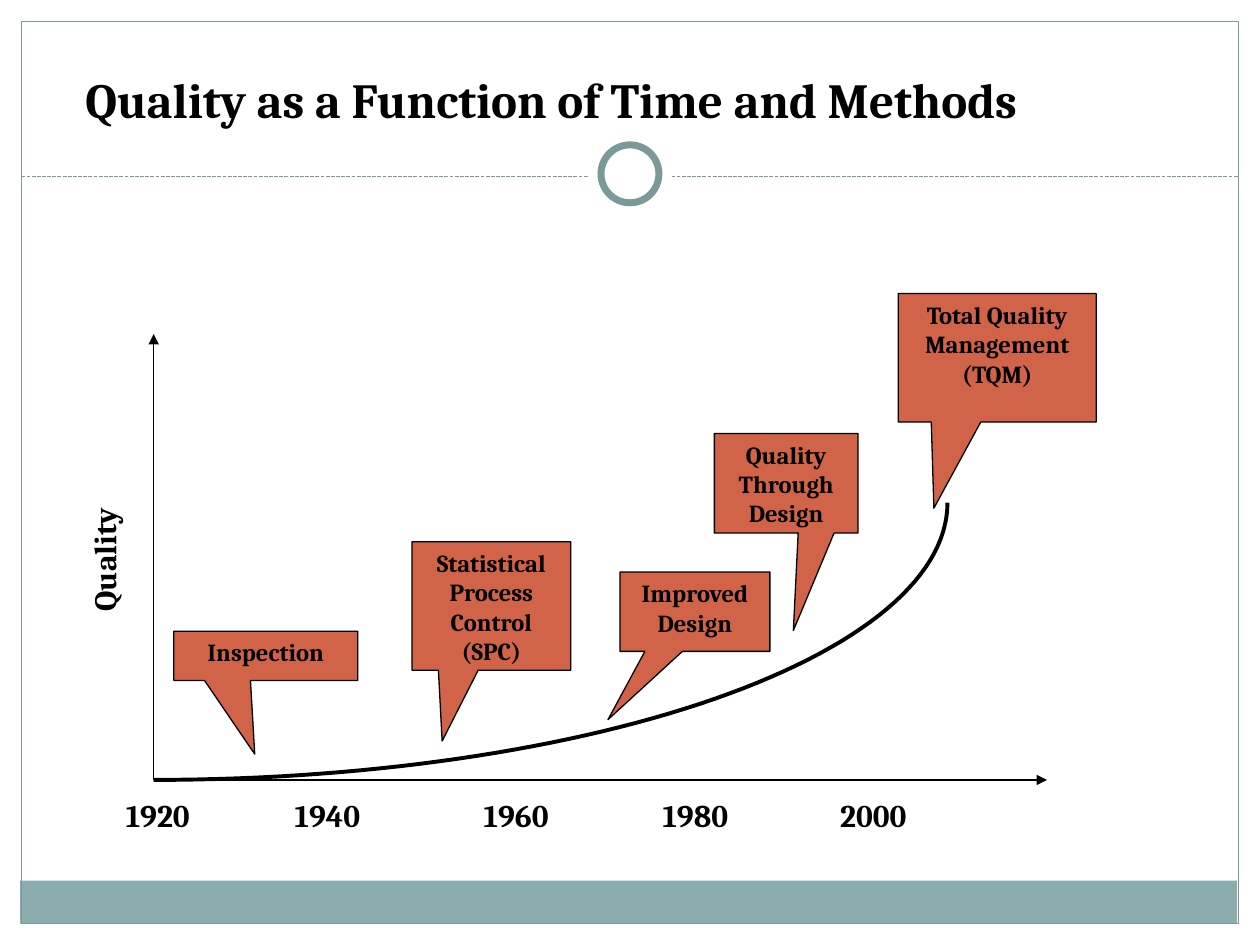
"""Build a slide that shows quality methods along a rising curve over time."""
from dataclasses import dataclass
from math import cos, pi, sin
from typing import Optional

from lxml import etree
from pptx import Presentation
from pptx.dml.color import RGBColor
from pptx.enum.dml import MSO_LINE
from pptx.enum.shapes import MSO_CONNECTOR, MSO_SHAPE
from pptx.enum.text import MSO_ANCHOR, PP_ALIGN
from pptx.oxml.ns import qn
from pptx.util import Pt

RECTANGLE = MSO_SHAPE.RECTANGLE
OVAL = MSO_SHAPE.OVAL
CALLOUT = MSO_SHAPE.RECTANGULAR_CALLOUT
STRAIGHT = MSO_CONNECTOR.STRAIGHT
DASH = MSO_LINE.SQUARE_DOT
TOP = MSO_ANCHOR.TOP
LEFT = PP_ALIGN.LEFT
CENTER = PP_ALIGN.CENTER

BLACK = RGBColor(0x00, 0x00, 0x00)
WHITE = RGBColor(0xFF, 0xFF, 0xFF)
TEAL = RGBColor(0x7C, 0x99, 0x9A)
LIGHT_TEAL = RGBColor(0x8C, 0xAD, 0xAE)
RUST = RGBColor(0xD1, 0x63, 0x49)

THIN = 0.75
CURVE_STEPS = 60
FONT_FORMAT = {"name": "Cambria", "bold": True}


@dataclass(frozen=True)
class Box:
    """Left, top, width and height in points."""

    left: float
    top: float
    width: float
    height: float

    def lengths(self) -> list:
        """Return the four values as lengths."""
        return [Pt(value) for value in (self.left, self.top, self.width, self.height)]


@dataclass(frozen=True)
class Panel:
    """A plain shape of the slide's frame."""

    kind: int
    box: Box
    fill: Optional[RGBColor] = None
    line: Optional[RGBColor] = None
    weight: float = THIN


@dataclass(frozen=True)
class Label:
    """A text box with one line of text."""

    text: str
    box: Box
    size: float = 18
    rotation: float = 0


@dataclass(frozen=True)
class Method:
    """A callout that names a quality method, with its pointer's offset."""

    text: str
    box: Box
    pointer: tuple


@dataclass(frozen=True)
class Rule:
    """A straight line between two points."""

    start: tuple
    end: tuple
    color: RGBColor = BLACK
    dashed: bool = False
    arrow: bool = False


FRAME = Box(12.24, 12.24, 695.52, 515.52)
ORIGIN = (87.84, 445.68)
CURVE_END = (541.44, 287.28)

FOOTER = Panel(RECTANGLE, Box(11.52, 503.28, 695.52, 24.48), LIGHT_TEAL)
BORDER = Panel(RECTANGLE, FRAME, line=TEAL)
RINGS = (
    Panel(OVAL, Box(336, 75.6, 48, 48), WHITE),
    Panel(OVAL, Box(343.44, 82.8, 33.12, 33.12), WHITE, TEAL, 4),
)
DIVIDER = Rule((12.24, 100.8), (707.76, 100.8), TEAL, dashed=True)
AXES = (
    Rule(ORIGIN, (87.84, 190.8), arrow=True),
    Rule(ORIGIN, (598.32, 445.68), arrow=True),
)
YEAR_LEFTS = {"1920": 64.8, "1940": 161.28, "1960": 269.28, "1980": 371.52, "2000": 473.04}
LABELS = [Label(year, Box(left, 451.44, 68, 28.8)) for year, left in YEAR_LEFTS.items()] + [
    Label(" Quality", Box(12.24, 296.64, 96.48, 30.96), rotation=270),
    Label("Quality as a Function of Time and Methods", Box(41.76, 36, 648, 41.04), size=28),
]
METHODS = (
    Method("Improved Design", Box(354.24, 326.88, 85.68, 45.36), (-0.58, 1.36)),
    Method("Total Quality Management (TQM)", Box(513.36, 167.76, 113.04, 73.44), (-0.32, 1.17)),
    Method("Statistical\nProcess\nControl\n(SPC)", Box(235.44, 309.6, 90.72, 73.44), (-0.31, 1.05)),
    Method("Inspection", Box(99.36, 360.72, 105.12, 28.08), (-0.06, 2)),
    Method("Quality Through\nDesign", Box(408.24, 247.68, 82.08, 56.88), (0.05, 1.48)),
)


def apply(target, values: dict) -> None:
    """Set every attribute in values on the target."""
    for name, value in values.items():
        setattr(target, name, value)


def write_text(shape, text: str, size: float, alignment: int) -> None:
    """Fill a shape with formatted paragraphs, one for each line."""
    frame = shape.text_frame
    apply(frame, {"text": text, "word_wrap": True, "vertical_anchor": TOP})
    for paragraph in frame.paragraphs:
        paragraph.alignment = alignment
        for run in paragraph.runs:
            apply(run.font, {**FONT_FORMAT, "size": Pt(size)})
            run.font.color.rgb = BLACK


def add_panel(slide, panel: Panel):
    """Draw a plain shape and return it."""
    shape = slide.shapes.add_shape(panel.kind, *panel.box.lengths())
    shape.shadow.inherit = False
    if panel.fill is None:
        shape.fill.background()
    else:
        shape.fill.solid()
        shape.fill.fore_color.rgb = panel.fill
    if panel.line is None:
        shape.line.fill.background()
    else:
        shape.line.color.rgb = panel.line
        shape.line.width = Pt(panel.weight)
    return shape


def add_label(slide, label: Label) -> None:
    """Draw a text box."""
    shape = slide.shapes.add_textbox(*label.box.lengths())
    shape.rotation = label.rotation
    write_text(shape, label.text, label.size, LEFT)


def add_method(slide, method: Method) -> None:
    """Draw a callout."""
    shape = add_panel(slide, Panel(CALLOUT, method.box, RUST, BLACK))
    for index, offset in enumerate(method.pointer):
        shape.adjustments[index] = offset
    write_text(shape, method.text, 14, CENTER)


def add_rule(slide, rule: Rule) -> None:
    """Draw a straight line, dashed or with an arrowhead if asked."""
    ends = [Pt(value) for value in (*rule.start, *rule.end)]
    connector = slide.shapes.add_connector(STRAIGHT, *ends)
    connector.line.color.rgb = rule.color
    connector.line.width = Pt(THIN)
    if rule.dashed:
        connector.line.dash_style = DASH
    properties = connector._element.spPr
    if rule.arrow:
        etree.SubElement(properties.find(qn("a:ln")), qn("a:tailEnd"), type="triangle")
    etree.SubElement(properties, qn("a:effectLst"))


def add_curve(slide) -> None:
    """Draw the quality curve as a quarter of an ellipse."""
    width, height = CURVE_END[0] - ORIGIN[0], ORIGIN[1] - CURVE_END[1]
    angles = [step / CURVE_STEPS * pi / 2 for step in range(CURVE_STEPS + 1)]
    points = [
        (Pt(ORIGIN[0] + width * sin(angle)), Pt(CURVE_END[1] + height * cos(angle)))
        for angle in angles
    ]
    builder = slide.shapes.build_freeform(*points[0])
    builder.add_line_segments(points[1:], close=False)
    curve = builder.convert_to_shape()
    curve.shadow.inherit = False
    curve.fill.background()
    curve.line.color.rgb = BLACK
    curve.line.width = Pt(2.25)


def main() -> None:
    """Build and save the presentation."""
    presentation = Presentation()
    apply(presentation, {"slide_width": Pt(720), "slide_height": Pt(540)})
    slide = presentation.slides.add_slide(presentation.slide_layouts[6])
    for panel in (FOOTER, BORDER):
        add_panel(slide, panel)
    add_rule(slide, DIVIDER)
    for ring in RINGS:
        add_panel(slide, ring)
    for axis in AXES:
        add_rule(slide, axis)
    for label in LABELS:
        add_label(slide, label)
    for method in METHODS:
        add_method(slide, method)
    add_curve(slide)
    presentation.save("out.pptx")


if __name__ == "__main__":
    main()
